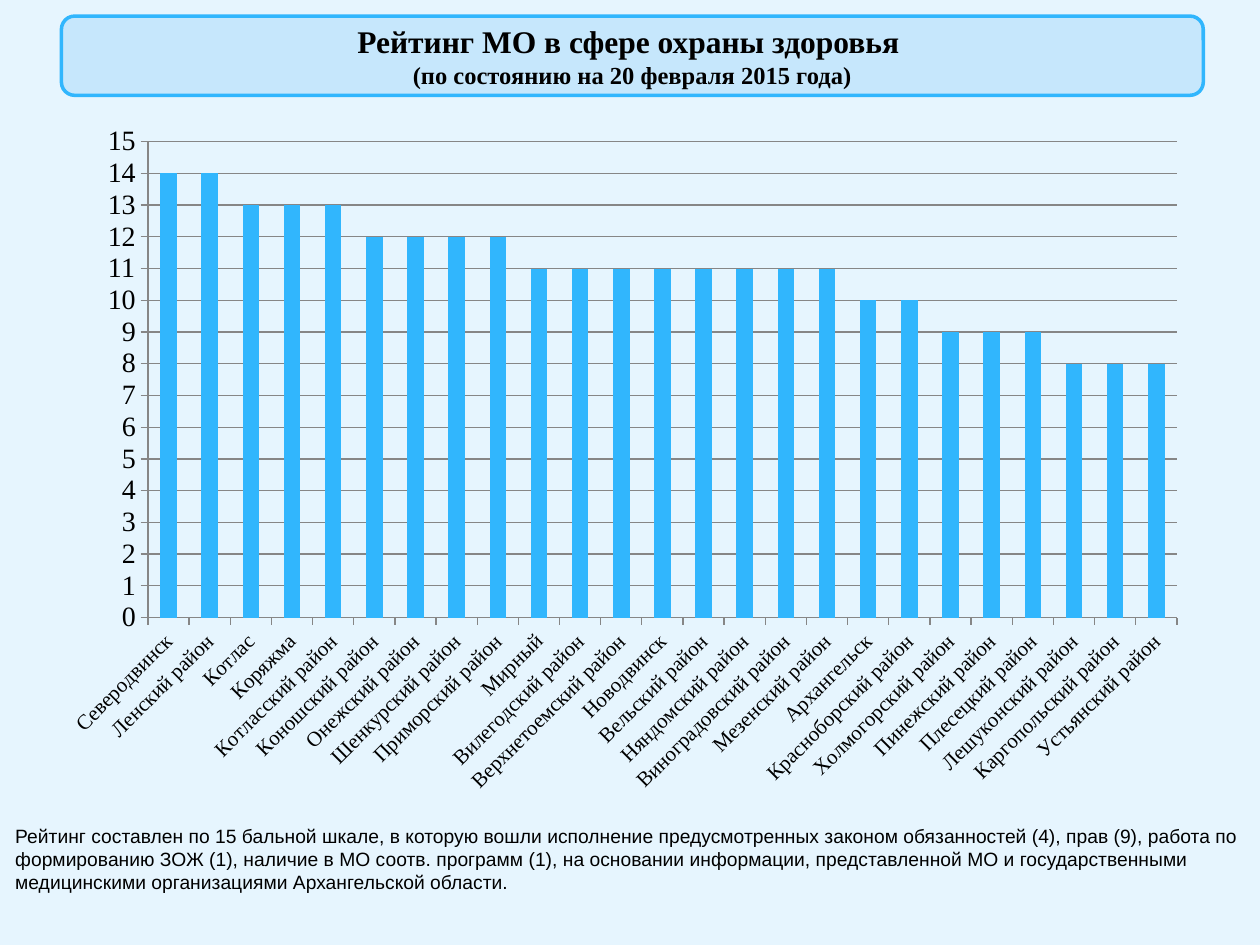
from dataclasses import dataclass

from lxml import etree
from pptx import Presentation
from pptx.chart.data import CategoryChartData
from pptx.dml.color import RGBColor
from pptx.enum import chart as ch, shapes, text
from pptx.oxml import ns
from pptx.util import Pt


@dataclass(frozen=True)
class Theme:
    background: RGBColor = RGBColor(0xE6, 0xF5, 0xFE)
    panel: RGBColor = RGBColor(0xC6, 0xE7, 0xFC)
    accent: RGBColor = RGBColor(0x31, 0xB6, 0xFD)
    grid: RGBColor = RGBColor(0x86, 0x86, 0x86)
    ink: RGBColor = RGBColor(0, 0, 0)
    serif: str = "Times New Roman"
    sans: str = "Arial"
    chart_font: str = "Calibri"
    title: int = 18
    subtitle: int = 14
    values: int = 16
    categories: int = 12
    note: int = 11


THEME = Theme()

RATING = {
    14: ["Северодвинск", "Ленский район"],
    13: ["Котлас", "Коряжма", "Котласский район"],
    12: ["Коношский район", "Онежский район", "Шенкурский район", "Приморский район"],
    11: ["Мирный", "Вилегодский район", "Верхнетоемский район", "Новодвинск",
         "Вельский район", "Няндомский район", "Виноградовский район", "Мезенский район"],
    10: ["Архангельск", "Красноборский район"],
    9: ["Холмогорский район", "Пинежский район", "Плесецкий район"],
    8: ["Лешуконский район", "Каргопольский район", "Устьянский район"],
}
NOTE = ("Рейтинг составлен по 15 бальной шкале, в которую вошли исполнение "
        "предусмотренных законом обязанностей (4), прав (9), работа по формированию "
        "ЗОЖ (1), наличие в МО соотв. программ (1), на основании информации, "
        "представленной МО и государственными медицинскими организациями "
        "Архангельской области.")


def style_font(font, name, size, bold=False):
    font.name, font.size, font.bold = name, Pt(size), bold
    font.color.rgb = THEME.ink


def add_run(p, words, name, size, bold=False):
    r = p.add_run()
    r.text = words
    style_font(r.font, name, size, bold)


def add_title(s, box):
    sp = s.shapes.add_shape(shapes.MSO_SHAPE.ROUNDED_RECTANGLE, *box)
    sp.shadow.inherit = False
    sp.fill.solid()
    sp.fill.fore_color.rgb = THEME.panel
    sp.line.color.rgb = THEME.accent
    sp.line.width = Pt(2)
    tf = sp.text_frame
    tf.word_wrap = True
    tf.vertical_anchor = text.MSO_ANCHOR.MIDDLE
    lines = [("Рейтинг МО в сфере охраны здоровья ", THEME.title),
             ("(по состоянию на 20 февраля 2015 года)", THEME.subtitle)]
    for i, (words, size) in enumerate(lines):
        p = tf.add_paragraph() if i else tf.paragraphs[0]
        p.alignment = text.PP_ALIGN.CENTER
        add_run(p, words, THEME.serif, size, bold=True)


def set_inner_plot(chart, box, plot_box):
    """Fix the plot area; plot_box is measured from the chart's corner."""
    area = chart.plots[0]._element.getparent()
    for old in area.findall(ns.qn("c:layout")):
        area.remove(old)
    layout = etree.Element(ns.qn("c:layout"))
    manual = etree.SubElement(layout, ns.qn("c:manualLayout"))
    width, height = box[2:]
    shares = [part / whole for part, whole in zip(plot_box, (width, height) * 2)]
    settings = [("layoutTarget", "inner"), ("xMode", "edge"), ("yMode", "edge"),
                *zip("xywh", shares)]
    for tag, value in settings:
        etree.SubElement(manual, ns.qn("c:" + tag)).set("val", str(value))
    area.insert(0, layout)


def style_axis(axis, size):
    style_font(axis.tick_labels.font, THEME.serif, size)
    axis.format.line.color.rgb = THEME.grid
    axis.major_tick_mark = ch.XL_TICK_MARK.OUTSIDE
    axis.minor_tick_mark = ch.XL_TICK_MARK.NONE


def add_rating_chart(s, box):
    data = CategoryChartData(number_format="General")
    data.categories = [name for names in RATING.values() for name in names]
    data.add_series("Series 1", [score for score, names in RATING.items() for _ in names])
    chart = s.shapes.add_chart(ch.XL_CHART_TYPE.COLUMN_CLUSTERED, *box, data).chart
    chart.has_title = chart.has_legend = False
    style_font(chart.font, THEME.chart_font, THEME.title)
    set_inner_plot(chart, box, (Pt(47.1), Pt(14.7), Pt(588), Pt(272)))

    plot = chart.plots[0]
    plot.vary_by_categories = False
    plot.gap_width = 150
    fill = plot.series[0].format.fill
    fill.solid()
    fill.fore_color.rgb = THEME.accent

    style_axis(chart.category_axis, THEME.categories)
    labels = chart.category_axis._element.find(ns.qn("c:txPr"))
    labels.find(ns.qn("a:bodyPr")).set("rot", str(-45 * 60000))

    scores = chart.value_axis
    style_axis(scores, THEME.values)
    scores.minimum_scale, scores.maximum_scale, scores.major_unit = 0, 15, 1
    scores.has_major_gridlines = True
    scores.major_gridlines.format.line.color.rgb = THEME.grid


def add_note(s, box):
    tf = s.shapes.add_textbox(*box).text_frame
    tf.word_wrap = True
    tf.auto_size = text.MSO_AUTO_SIZE.SHAPE_TO_FIT_TEXT
    add_run(tf.paragraphs[0], NOTE, THEME.sans, THEME.note)


def rating_slide(prs):
    s = prs.slides.add_slide(prs.slide_layouts[6])
    s.background.fill.solid()
    s.background.fill.fore_color.rgb = THEME.background
    add_rating_chart(s, (Pt(37.44), Pt(66.24), Pt(648), Pt(414)))
    add_title(s, (Pt(35.1), Pt(9.2), Pt(652.5), Pt(45.3)))
    add_note(s, (Pt(1.6), Pt(467.5), Pt(718.5), Pt(47.5)))


def main():
    prs = Presentation()
    prs.slide_width, prs.slide_height = Pt(720), Pt(540)
    rating_slide(prs)
    prs.save("out.pptx")


if __name__ == "__main__":
    main()
